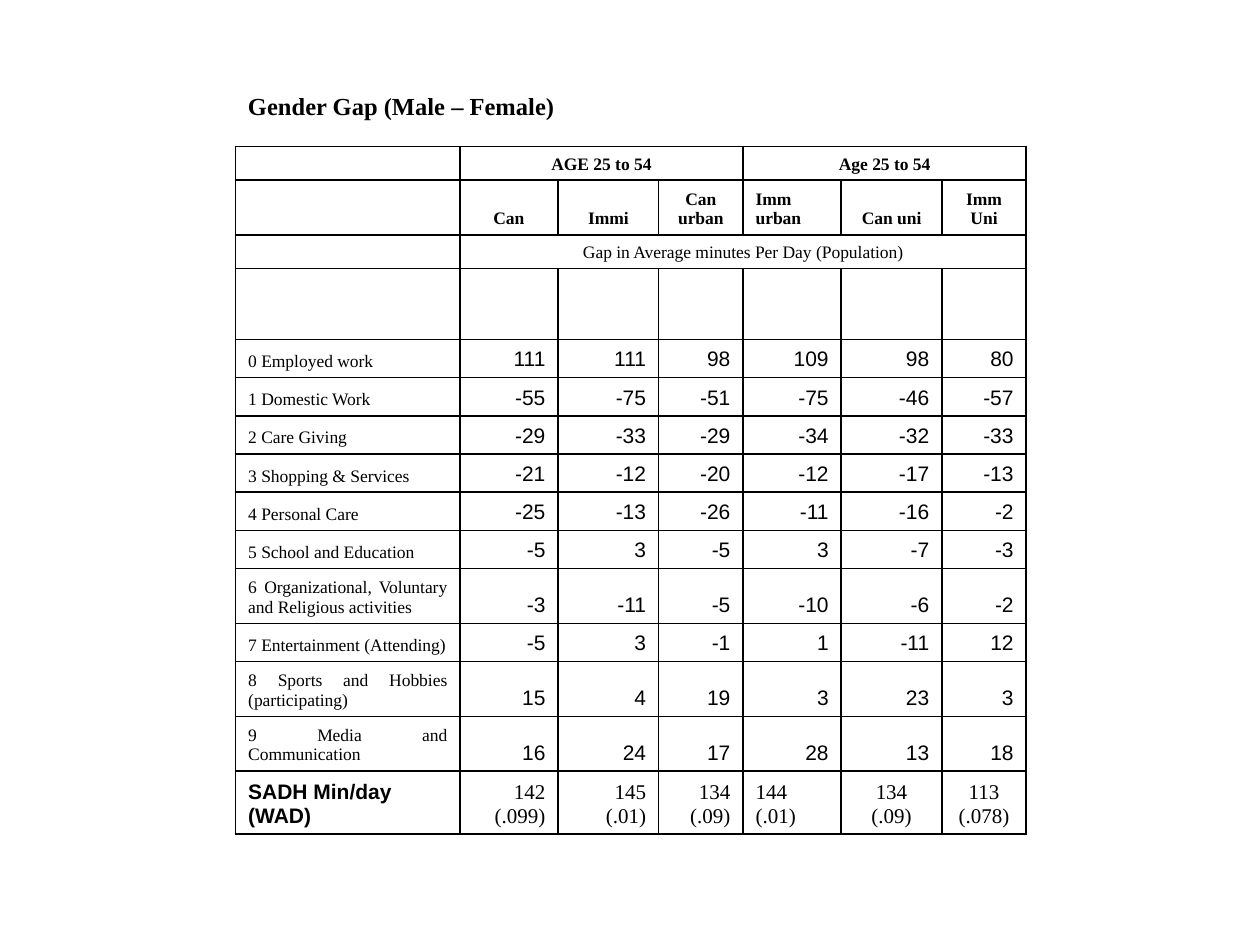
import dataclasses

import lxml.etree
import pptx
import pptx.dml.color
import pptx.enum.text
import pptx.oxml.ns
import pptx.util

Cm = pptx.util.Cm
Pt = pptx.util.Pt
Align = pptx.enum.text.PP_ALIGN
Anchor = pptx.enum.text.MSO_ANCHOR


@dataclasses.dataclass(frozen=True)
class Theme:
    ink: str = "000000"
    serif: str = "Times New Roman"
    sans: str = "Arial"
    title: int = 14
    label: int = 10
    value: int = 12
    border: int = 1


@dataclasses.dataclass(frozen=True)
class TextStyle:
    size: int
    font: str
    bold: bool = False
    align: Align = Align.LEFT


class SlideBuilder:
    def __init__(self, slide, theme):
        self.slide = slide
        self.theme = theme

    def set_text(self, frame, text, style):
        frame.text = text
        for para in frame.paragraphs:
            para.alignment = style.align
            for span in para.runs:
                span.font.size = Pt(style.size)
                span.font.name = style.font
                span.font.bold = style.bold
                span.font.color.rgb = pptx.dml.color.RGBColor.from_string(self.theme.ink)
            if not para.runs:
                para._p.get_or_add_endParaRPr().set("sz", str(style.size * 100))

    def title(self, text, left, top, width, height):
        box = self.slide.shapes.add_textbox(left, top, width, height)
        box.text_frame.word_wrap = True
        box.text_frame.vertical_anchor = Anchor.MIDDLE
        self.set_text(box.text_frame, text, TextStyle(self.theme.title, self.theme.serif, True))

    def table(self, left, top, widths, heights):
        frame = self.slide.shapes.add_table(
            len(heights), len(widths), left, top, Cm(sum(widths)), Cm(sum(heights)))
        table = frame.table
        table.first_row = False
        table.horz_banding = False
        for column, width in zip(table.columns, widths):
            column.width = Cm(width)
        for row, height in zip(table.rows, heights):
            row.height = Cm(height)
        for cell in table.iter_cells():
            self.cell(cell, "", TextStyle(self.theme.label, self.theme.serif))
            self.borders(cell)
            cell.fill.background()
        return table

    def cell(self, cell, text, style):
        cell.vertical_anchor = Anchor.BOTTOM
        self.set_text(cell.text_frame, text, style)

    def borders(self, cell):
        qn = pptx.oxml.ns.qn
        properties = cell._tc.get_or_add_tcPr()
        for side in ("a:lnL", "a:lnR", "a:lnT", "a:lnB"):
            line = lxml.etree.SubElement(properties, qn(side), w=str(Pt(self.theme.border)))
            fill = lxml.etree.SubElement(line, qn("a:solidFill"))
            lxml.etree.SubElement(fill, qn("a:srgbClr"), val=self.theme.ink)


COLUMN_WIDTHS = [4.52] + [1.98, 2.03, 1.7] * 2
ONE_LINE, TWO_LINES, VALUE_LINE = 0.68, 1.1, 0.77
GROUPS = [(0, 1, 3, "AGE 25 to 54", True), (0, 4, 6, "Age 25 to 54", True),
          (2, 1, 6, "Gap in Average minutes Per Day (Population)", False)]
HEADINGS = ["Can", "Immi", "Can urban", "Imm urban", "Can uni", "Imm Uni"]
ACTIVITIES = [
    ("0 Employed work", (111, 111, 98, 109, 98, 80), VALUE_LINE),
    ("1 Domestic Work", (-55, -75, -51, -75, -46, -57), VALUE_LINE),
    ("2 Care Giving", (-29, -33, -29, -34, -32, -33), VALUE_LINE),
    ("3 Shopping & Services", (-21, -12, -20, -12, -17, -13), VALUE_LINE),
    ("4 Personal Care", (-25, -13, -26, -11, -16, -2), VALUE_LINE),
    ("5 School and Education", (-5, 3, -5, 3, -7, -3), VALUE_LINE),
    ("6 Organizational, Voluntary and Religious activities",
     (-3, -11, -5, -10, -6, -2), TWO_LINES),
    ("7 Entertainment (Attending)", (-5, 3, -1, 1, -11, 12), VALUE_LINE),
    ("8 Sports and Hobbies (participating)", (15, 4, 19, 3, 23, 3), TWO_LINES),
    ("9 Media and Communication", (16, 24, 17, 28, 13, 18), TWO_LINES),
]
TOTALS = [("142 (.099)", Align.RIGHT), ("145\n(.01)", Align.RIGHT),
          ("134 (.09)", Align.RIGHT), ("144\n(.01)", Align.LEFT),
          ("134\n(.09)", Align.CENTER), ("113 (.078)", Align.CENTER)]


def main():
    theme = Theme()
    deck = pptx.Presentation()
    deck.slide_width, deck.slide_height = Cm(25.4), Cm(19.05)
    page = SlideBuilder(deck.slides.add_slide(deck.slide_layouts[6]), theme)
    page.title("Gender Gap (Male – Female)", Cm(4.75), Cm(1.7), Cm(9.14), Cm(0.85))

    heights = [ONE_LINE, TWO_LINES, ONE_LINE, 1.43]
    heights += [height for _, _, height in ACTIVITIES] + [1.27]
    table = page.table(Cm(4.75), Cm(2.95), COLUMN_WIDTHS, heights)

    for row, first, last, text, bold in GROUPS:
        table.cell(row, first).merge(table.cell(row, last))
        page.cell(table.cell(row, first), text,
                  TextStyle(theme.label, theme.serif, bold, Align.CENTER))
    for column, heading in enumerate(HEADINGS, 1):
        align = Align.LEFT if heading == "Imm urban" else Align.CENTER
        page.cell(table.cell(1, column), heading,
                  TextStyle(theme.label, theme.serif, True, align))

    label_style = TextStyle(theme.label, theme.serif, align=Align.JUSTIFY)
    value_style = TextStyle(theme.value, theme.sans, align=Align.RIGHT)
    for row, (label, values, _) in enumerate(ACTIVITIES, 4):
        page.cell(table.cell(row, 0), label, label_style)
        for column, value in enumerate(values, 1):
            page.cell(table.cell(row, column), str(value), value_style)

    total_row = len(heights) - 1
    page.cell(table.cell(total_row, 0), "SADH Min/day (WAD)",
              TextStyle(theme.value, theme.sans, True))
    for column, (text, align) in enumerate(TOTALS, 1):
        page.cell(table.cell(total_row, column), text,
                  TextStyle(theme.value, theme.serif, align=align))

    deck.save("out.pptx")


if __name__ == "__main__":
    main()
